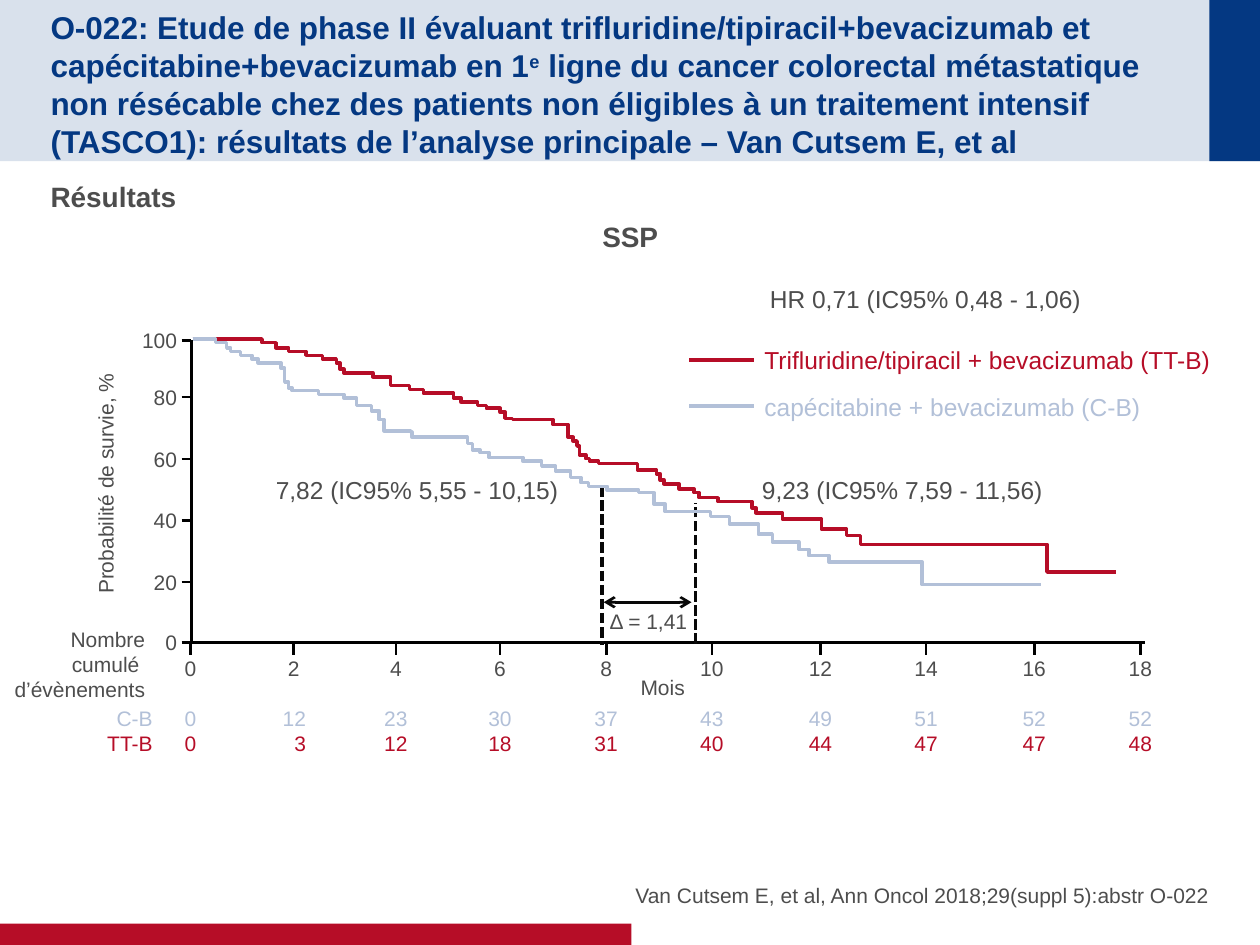
import pptx
import pptx.dml.color
import pptx.enum.dml
import pptx.enum.shapes
import pptx.enum.text
import pptx.oxml.ns
import pptx.oxml.xmlchemy
import pptx.util

Cm = pptx.util.Cm
ALIGN = pptx.enum.text.PP_ALIGN
ANCHOR = pptx.enum.text.MSO_ANCHOR

THEME = {
    "font": "Arial", "navy": "043882", "red": "B60D27", "pale": "B2C0D8",
    "grey": "4D4D4D", "black": "000000", "dark": "080808",
    "title": 18, "head": 16, "note": 14, "small": 12,
    "thin": 1.5, "thick": 2,
}

TITLE = [
    "O-022: Etude de phase II évaluant trifluridine/tipiracil+bevacizumab et "
    "capécitabine+bevacizumab en 1",
    ("e", "super"),
    " ligne du cancer colorectal métastatique non résécable chez des patients "
    "non éligibles à un traitement intensif (TASCO1): résultats de l’analyse "
    "principale – Van Cutsem E, et al",
]
SOURCE = "Van Cutsem E, et al, Ann Oncol 2018;29(suppl 5):abstr O-022"

# Month, tick position in cm, events with C-B, events with TT-B
MONTHS = [
    (0, 3.84, 0, 0), (2, 5.92, 12, 3), (4, 7.98, 23, 12), (6, 10.08, 30, 18),
    (8, 12.22, 37, 31), (10, 14.35, 43, 40), (12, 16.54, 49, 44),
    (14, 18.67, 51, 47), (16, 20.85, 52, 47), (18, 22.99, 52, 48),
]
# Percent, tick position in cm
LEVELS = [(100, 6.86), (80, 8.0), (60, 9.25), (40, 10.49), (20, 11.73), (0, 12.95)]

# Text, left, top, width, colour
NOTES = [
    ("HR 0,71 (IC95% 0,48 - 1,06)", 15.27, 5.59, 6.96, "grey"),
    ("9,23 (IC95% 7,59 - 11,56)", 15.11, 9.45, 6.35, "grey"),
    ("7,82 (IC95% 5,55 - 10,15)", 5.31, 9.45, 6.4, "grey"),
    ("Trifluridine/tipiracil + bevacizumab (TT-B)", 15.16, 6.83, 9.55, "red"),
    ("capécitabine + bevacizumab (C-B)", 15.16, 7.77, 8.15, "pale"),
]
KEYS = [("red", 7.26), ("pale", 8.18)]

# Curves and axes are drawn on a fine grid; each drop is (x, new level)
GRID = Cm(2.54) / 100
AXES = [(152, 270), (152, 510), (909, 510)]
START = (153, 269)
CURVES = [
    ("red", 886, [
        (208, 272), (219, 276), (229, 279), (243, 282), (256, 285), (267, 288),
        (270, 293), (273, 296), (296, 299), (310, 306), (325, 309), (336, 312),
        (360, 316), (366, 319), (379, 322), (386, 324), (397, 327), (401, 332),
        (407, 333), (439, 337), (451, 347), (455, 350), (458, 354), (460, 361),
        (465, 364), (468, 366), (475, 368), (506, 373), (521, 376), (524, 381),
        (527, 384), (539, 388), (551, 391), (555, 395), (570, 398), (597, 403),
        (600, 407), (621, 412), (652, 420), (672, 425), (683, 432), (831, 454)]),
    ("pale", 826, [
        (171, 272), (180, 276), (183, 279), (191, 282), (200, 285), (205, 288),
        (223, 292), (226, 303), (229, 308), (232, 310), (253, 313), (273, 316),
        (283, 322), (295, 326), (301, 333), (305, 342), (326, 343), (327, 347),
        (371, 352), (375, 357), (381, 359), (388, 363), (415, 366), (430, 370),
        (441, 374), (453, 379), (461, 383), (467, 386), (482, 389), (507, 391),
        (519, 400), (528, 406), (564, 410), (579, 416), (602, 424), (613, 430),
        (634, 436), (642, 441), (658, 446), (732, 464)]),
]

deck = pptx.Presentation()
deck.slide_width, deck.slide_height = Cm(25.4), Cm(19.05)
slide = deck.slides.add_slide(deck.slide_layouts[6])


def tint(name):
    return pptx.dml.color.RGBColor.from_string(THEME[name])


def node(tag, **attrs):
    item = pptx.oxml.xmlchemy.OxmlElement(tag)
    for name, value in attrs.items():
        item.set(name, value)
    return item


def text(paras, left, top, width, height, size="small", color="grey", bold=False,
         align="LEFT", anchor="TOP", pad=(0.25, 0.13, 0.25, 0.13), wrap=False,
         after=0, gaps=None, turn=0):
    """Add a text box; a paragraph is a string, (string, colour) or a list of runs."""
    box = slide.shapes.add_textbox(Cm(left), Cm(top), Cm(width), Cm(height))
    box.rotation = turn
    frame = box.text_frame
    frame.word_wrap = wrap
    fit = pptx.enum.text.MSO_AUTO_SIZE
    frame.auto_size = fit.NONE if wrap else fit.SHAPE_TO_FIT_TEXT
    frame.vertical_anchor = ANCHOR[anchor]
    (frame.margin_left, frame.margin_top,
     frame.margin_right, frame.margin_bottom) = map(Cm, pad)
    aligns = [align] * len(paras) if isinstance(align, str) else align
    for i, runs in enumerate(paras):
        para = frame.paragraphs[0] if i == 0 else frame.add_paragraph()
        para.alignment = ALIGN[aligns[i]]
        para.space_after = pptx.util.Pt(after)
        para.space_before = pptx.util.Pt((gaps or {}).get(i, 0))
        for part in runs if isinstance(runs, list) else [runs]:
            word, style = part if isinstance(part, tuple) else (part, color)
            run = para.add_run()
            run.text = word
            run.font.name, run.font.bold = THEME["font"], bold
            run.font.size = pptx.util.Pt(THEME[size])
            run.font.color.rgb = tint(color if style == "super" else style)
            if style == "super":
                run.font._element.set("baseline", "30000")


def bar(left, top, width, height, color, alpha=None):
    kind = pptx.enum.shapes.MSO_SHAPE.RECTANGLE
    shape = slide.shapes.add_shape(kind, Cm(left), Cm(top), Cm(width), Cm(height))
    shape.shadow.inherit = False
    shape.line.fill.background()
    shape.fill.solid()
    shape.fill.fore_color.rgb = tint(color)
    if alpha:
        fill = shape._element.spPr.find(".//" + pptx.oxml.ns.qn("a:srgbClr"))
        fill.append(node("a:alpha", val=str(alpha * 1000)))


def stroke(shape, color, width):
    shape.line.color.rgb = tint(color)
    shape.line.width = pptx.util.Pt(THEME[width])


def line(x1, y1, x2, y2, color="black", width="thin", dash=False, heads=False):
    kind = pptx.enum.shapes.MSO_CONNECTOR.STRAIGHT
    link = slide.shapes.add_connector(kind, Cm(x1), Cm(y1), Cm(x2), Cm(y2))
    stroke(link, color, width)
    if dash:
        link.line.dash_style = pptx.enum.dml.MSO_LINE.SQUARE_DOT
    if heads:
        for tag in ("a:headEnd", "a:tailEnd"):
            link.line._get_or_add_ln().append(node(tag, type="arrow"))
    link._element.spPr.append(node("a:effectLst"))


def trace(points, color, width):
    pen = slide.shapes.build_freeform(*points[0], scale=GRID)
    pen.add_line_segments(points[1:], close=False)
    shape = pen.convert_to_shape()
    shape.shadow.inherit = False
    shape.fill.background()
    stroke(shape, color, width)


def stairs(drops, end):
    """Turn the drops of a curve into its corner points."""
    points = [START]
    for x, y in drops:
        points += [(x, points[-1][1]), (x, y)]
    return points + [(end, points[-1][1])]


# Page frame
bar(0, 0, 25.4, 3.25, "navy", alpha=15)
bar(24.38, 0, 1.02, 3.25, "navy")
bar(0, 18.62, 12.73, 0.43, "red")
text([TITLE], 1.02, 0.51, 22.89, 2.24, size="title", color="navy", bold=True,
     anchor="MIDDLE", pad=(0, 0.13, 0, 0), wrap=True)
text(["Résultats", "SSP"], 1.02, 3.48, 23.37, 13.18, size="head", bold=True,
     align=["LEFT", "CENTER"], pad=(0, 0.13, 0, 0.13), wrap=True, after=4)
text([SOURCE], 12.7, 16.94, 11.68, 1.35, align="RIGHT", anchor="BOTTOM",
     pad=(0, 0, 0, 0), wrap=True, after=4)

# Axes and event counts
trace(AXES, "black", "thin")
for level, y in LEVELS:
    line(3.66, y, 3.86, y)
    text([str(level)], 2.6, y - 0.38, 1.22, 0.76, align="RIGHT", anchor="MIDDLE")
for month, x, cb, ttb in MONTHS:
    line(x, 12.95, x, 13.21)
    side = "RIGHT" if month == 2 else "CENTER"
    text([str(month), (str(cb), "pale"), (str(ttb), "red")], x - 0.5, 13.08, 1, 2.31,
         align=["CENTER", side, side], gaps={1: 14.3})
text(["Probabilité de survie, %"], -0.38, 9.37, 5, 0.76, align="CENTER", turn=270)
text(["Mois"], 12.65, 13.46, 1.42, 0.76, align="CENTER")
text(["Nombre", "cumulé ", "d’évènements"], 0, 12.5, 3.18, 1.8, align="RIGHT")
text([("C-B", "pale"), ("TT-B", "red")], 1.78, 14.09, 1.55, 1.3, align="RIGHT")

# Medians, notes and key
line(12.17, 12.14, 13.94, 12.14, "dark", heads=True)
line(14.02, 12.98, 14.02, 10.13, "dark", "thick", dash=True)
line(12.14, 9.8, 12.14, 13, "dark", "thick", dash=True)
text(["Δ = 1,41"], 12.04, 12.14, 2.13, 0.76)
for word, left, top, width, color in NOTES:
    text([word], left, top, width, 0.86, size="note", color=color)
for color, y in KEYS:
    line(13.89, y, 15.19, y, color, "thick")

for color, end, drops in CURVES:
    trace(stairs(drops, end), color, "thick")

deck.save("out.pptx")
